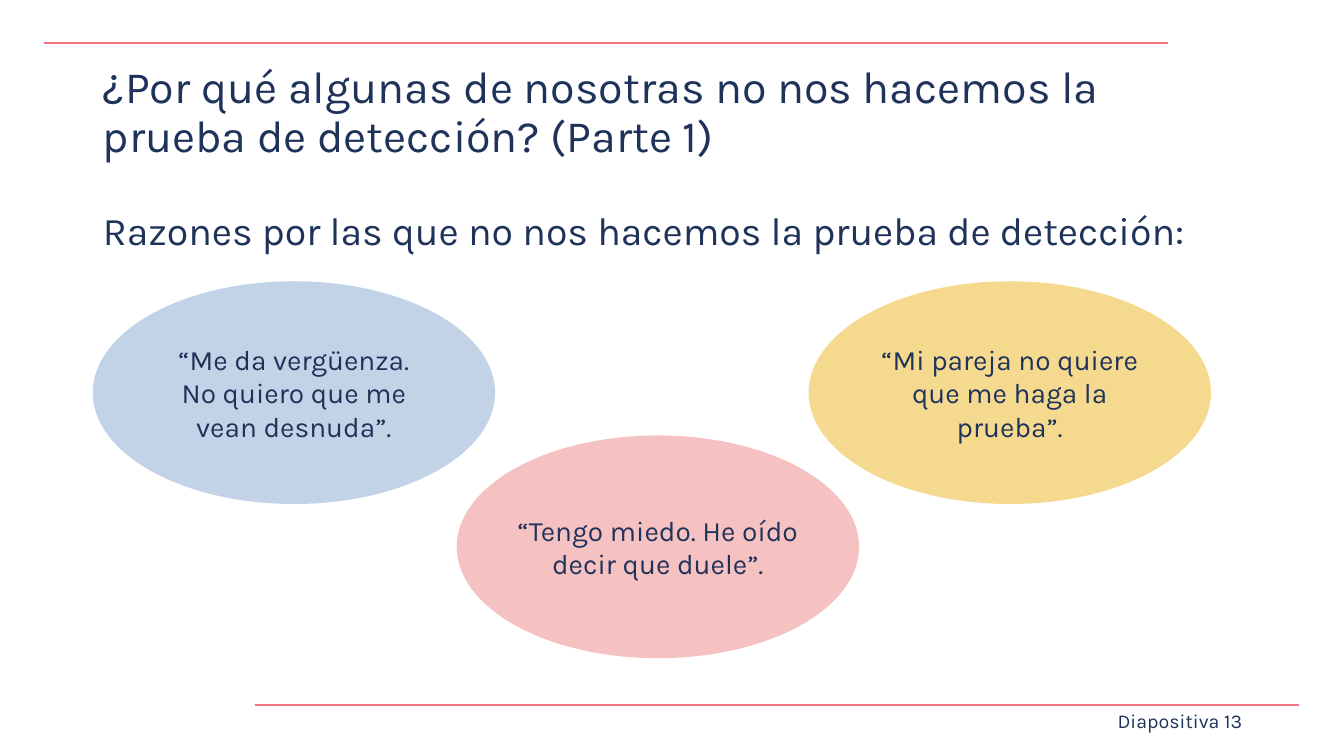
from dataclasses import dataclass

from lxml import etree
from pptx import Presentation
from pptx.dml.color import RGBColor
from pptx.enum.shapes import MSO_CONNECTOR, MSO_SHAPE
from pptx.enum.text import MSO_ANCHOR, MSO_AUTO_SIZE, PP_ALIGN
from pptx.oxml.ns import qn
from pptx.slide import Slide
from pptx.text.text import TextFrame
from pptx.util import Inches, Pt

STRAIGHT = MSO_CONNECTOR.STRAIGHT
ELLIPSE = MSO_SHAPE.OVAL
TOP, MIDDLE = MSO_ANCHOR.TOP, MSO_ANCHOR.MIDDLE
LEFT, CENTER, RIGHT = PP_ALIGN.LEFT, PP_ALIGN.CENTER, PP_ALIGN.RIGHT
FIXED_SIZE = MSO_AUTO_SIZE.NONE

FONT = "Karla"
COLORS = {
    "navy": "1E325A",
    "coral": "F0737F",
    "blue": "B4C8E1",
    "pink": "F4B2B2",
    "yellow": "F3D072",
    "white": "FFFFFF",
}
MARGIN = 0.92
CONTENT_WIDTH = 11.5
BUBBLE_WIDTH, BUBBLE_HEIGHT = 3.99, 2.21
BUBBLE_OPACITY = 80


@dataclass(frozen=True)
class Rule:
    left: float
    right: float
    y: float


@dataclass(frozen=True)
class Bubble:
    text: str
    left: float
    top: float
    color: str
    side_inset: float = 0.1


RULES = [Rule(0.44, 11.58, 0.43), Rule(2.53, 12.88, 6.99)]
BUBBLES = [
    Bubble("“Me da vergüenza. No quiero que me vean desnuda”.", MARGIN, 2.79, "blue"),
    Bubble("“Tengo miedo. He oído decir que duele”.", 4.53, 4.32, "pink", 0),
    Bubble("“Mi pareja no quiere que me haga la prueba”.", 8.02, 2.79, "yellow"),
]


def color(name: str) -> RGBColor:
    return RGBColor.from_string(COLORS[name])


def place(shape, left: float, top: float, width: float, height: float) -> None:
    shape.left, shape.top = Inches(left), Inches(top)
    shape.width, shape.height = Inches(width), Inches(height)


def write(frame: TextFrame, text: str, *, size: float, align=LEFT, anchor=MIDDLE,
          line_spacing: float = 1.0, space_after: float = 0,
          side_inset: float = 0.1) -> None:
    frame.word_wrap = True
    frame.auto_size = FIXED_SIZE
    frame.vertical_anchor = anchor
    frame.margin_left = frame.margin_right = Inches(side_inset)
    frame.margin_top = frame.margin_bottom = Inches(0.05)
    para = frame.paragraphs[0]
    para.alignment = align
    para.line_spacing = line_spacing
    para.space_before, para.space_after = Pt(0), Pt(space_after)
    span = para.add_run()
    span.text = text
    span.font.name = FONT
    span.font.size = Pt(size)
    span.font.color.rgb = color("navy")


def remove_bullet(frame: TextFrame) -> None:
    properties = frame.paragraphs[0]._p.get_or_add_pPr()
    properties.set("marL", "0")
    properties.set("indent", "0")
    etree.SubElement(properties, qn("a:buNone"))


def draw_rule(page: Slide, rule: Rule) -> None:
    line = page.shapes.add_connector(
        STRAIGHT, Inches(rule.left), Inches(rule.y), Inches(rule.right), Inches(rule.y))
    line.line.color.rgb = color("coral")
    line.line.width = Pt(1.5)
    etree.SubElement(line._element.spPr, qn("a:effectLst"))


def draw_bubble(page: Slide, bubble: Bubble) -> None:
    shape = page.shapes.add_shape(
        ELLIPSE, Inches(bubble.left), Inches(bubble.top),
        Inches(BUBBLE_WIDTH), Inches(BUBBLE_HEIGHT))
    shape.shadow.inherit = False
    shape.fill.solid()
    shape.fill.fore_color.rgb = color(bubble.color)
    fill_color = shape._element.spPr.find(f"{qn('a:solidFill')}/{qn('a:srgbClr')}")
    etree.SubElement(fill_color, qn("a:alpha"), val=str(BUBBLE_OPACITY * 1000))
    shape.line.fill.background()
    write(shape.text_frame, bubble.text, size=20, align=CENTER,
          side_inset=bubble.side_inset)


def main() -> None:
    deck = Presentation()
    deck.slide_width, deck.slide_height = Inches(13.33), Inches(7.5)
    page = deck.slides.add_slide(deck.slide_layouts[1])
    page.background.fill.solid()
    page.background.fill.fore_color.rgb = color("white")

    for rule in RULES:
        draw_rule(page, rule)

    title = page.shapes.title
    place(title, MARGIN, 0.4, CONTENT_WIDTH, 1.45)
    write(title.text_frame,
          "¿Por qué algunas de nosotras no nos hacemos la prueba de detección? (Parte 1)",
          size=32, line_spacing=0.9)

    body = page.placeholders[1]
    place(body, MARGIN, 2, CONTENT_WIDTH, 4.76)
    remove_bullet(body.text_frame)
    write(body.text_frame, "Razones por las que no nos hacemos la prueba de detección:",
          size=28, anchor=TOP, space_after=14)

    box = page.shapes.add_textbox(Inches(10.47), Inches(6.95), Inches(1.95), Inches(0.4))
    write(box.text_frame, "Diapositiva 13", size=14, align=RIGHT)

    for bubble in BUBBLES:
        draw_bubble(page, bubble)

    deck.save("out.pptx")


if __name__ == "__main__":
    main()
